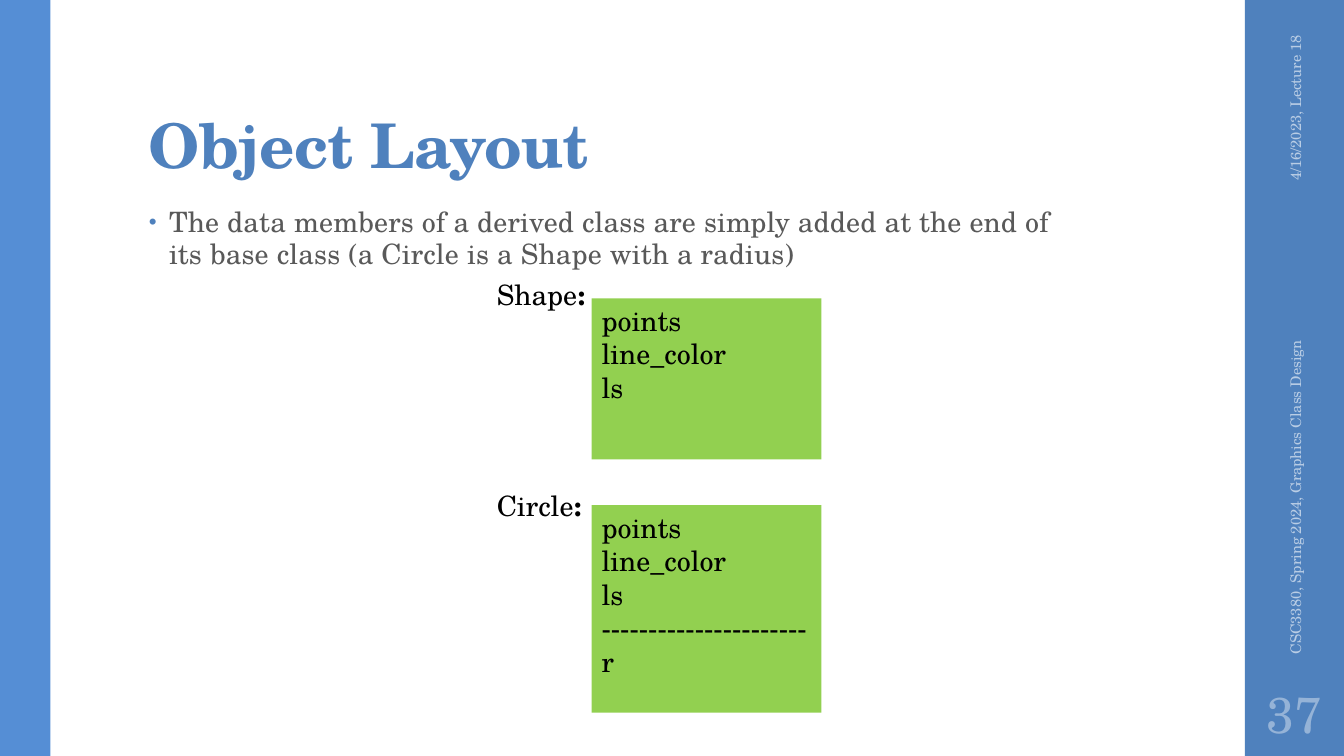
import pptx
import pptx.dml.color
import pptx.enum.shapes
import pptx.enum.text
import pptx.oxml
import pptx.oxml.ns
import pptx.util

Cm = pptx.util.Cm
Pt = pptx.util.Pt
RGBColor = pptx.dml.color.RGBColor
ALIGN = pptx.enum.text.PP_ALIGN
ANCHOR = pptx.enum.text.MSO_ANCHOR

FONT = "TeX Gyre Schola"
BLUE = RGBColor(0x4F, 0x81, 0xBD)
LIGHT_BLUE = RGBColor(0x55, 0x8E, 0xD5)
PALE_BLUE = RGBColor(0xB9, 0xCD, 0xE5)
NUMBER_BLUE = RGBColor(0x95, 0xB3, 0xD7)
GREEN = RGBColor(0x92, 0xD0, 0x50)
GRAY = RGBColor(0x59, 0x59, 0x59)
BLACK = RGBColor(0, 0, 0)

deck = pptx.Presentation()
deck.slide_width, deck.slide_height = Cm(33.87), Cm(19.05)
page = deck.slides.add_slide(deck.slide_layouts[6])


def add_rectangle(left, top, width, height, color):
    box = page.shapes.add_shape(
        pptx.enum.shapes.MSO_SHAPE.RECTANGLE, Cm(left), Cm(top), Cm(width), Cm(height))
    box.shadow.inherit = False
    box.fill.solid()
    box.fill.fore_color.rgb = color
    box.line.fill.background()
    return box


def write(box, text, size, color, align=ALIGN.LEFT, anchor=ANCHOR.TOP):
    """Fill a box with wrapped text in one size and color."""
    frame = box.text_frame
    frame.text = text
    frame.word_wrap = True
    frame.vertical_anchor = anchor
    for para in frame.paragraphs:
        para.alignment = align
        for span in para.runs:
            span.font.name = FONT
            span.font.size = Pt(size)
            span.font.color.rgb = color
    return frame


# Side bands
add_rectangle(31.37, 0, 2.5, 19.05, BLUE)
add_rectangle(0, 0, 1.27, 19.05, LIGHT_BLUE)

# Title
title = page.shapes.add_textbox(Cm(3.5), Cm(0.81), Cm(26.92), Cm(3.89))
frame = write(title, "Object Layout", 44, BLUE, anchor=ANCHOR.BOTTOM)
frame.margin_top = Cm(0.08)
para = frame.paragraphs[0]
para.line_spacing = 0.9
para.runs[0].font.bold = True
para.runs[0].font._element.set("spc", "-50")

# Bullet
body = page.shapes.add_textbox(Cm(3.5), Cm(5.08), Cm(23.88), Cm(12.09))
frame = write(body, "The data members of a derived class are simply added at the end of "
              "its base class (a Circle is a Shape with a radius)", 20, GRAY)
para = frame.paragraphs[0]
para.line_spacing = 0.95
para.space_before, para.space_after = Pt(14), Pt(2)
para.runs[0].font._element.set("spc", "10")
properties = para._p.get_or_add_pPr()
properties.set("marL", str(Cm(0.51)))
properties.set("indent", str(-Cm(0.51)))
namespace = pptx.oxml.ns.nsdecls("a")
for bullet_xml in (f'<a:buClr {namespace}><a:srgbClr val="{BLUE}"/></a:buClr>',
                   f'<a:buSzPct {namespace} val="80000"/>',
                   f'<a:buFont {namespace} typeface="Arial"/>',
                   f'<a:buChar {namespace} char="•"/>'):
    properties.append(pptx.oxml.parse_xml(bullet_xml))

# Date and course, turned to read upwards
for left, top, width, text, align in (
        (30, 2.77, 5.28, "4/16/2023, Lecture 18", ALIGN.RIGHT),
        (27.66, 11.25, 9.96, "CSC3380, Spring 2024, Graphics Class Design", ALIGN.LEFT)):
    box = page.shapes.add_textbox(Cm(left), Cm(top), Cm(width), Cm(1.02))
    box.rotation = 270
    write(box, text, 10.5, PALE_BLUE, align, ANCHOR.MIDDLE)

# Slide number
number = page.shapes.add_textbox(Cm(31.37), Cm(17.15), Cm(2.5), Cm(1.65))
frame = write(number, "37", 36, NUMBER_BLUE, ALIGN.CENTER, ANCHOR.MIDDLE)
frame.margin_left = frame.margin_right = Cm(0.13)

# Memory layout of each class
shape_members = ["points", "line_color", "ls"]
circle_members = shape_members + ["-" * 22, "r"]
for name, members, top, height, label_top in (
        ("Shape", shape_members, 7.52, 4.06, 6.88),
        ("Circle", circle_members, 12.73, 5.23, 12.19)):
    layout = add_rectangle(14.91, top, 5.79, height, GREEN)
    write(layout, "\n".join(members), 20, BLACK)
    label = page.shapes.add_textbox(Cm(12.27), Cm(label_top), Cm(3.48), Cm(1.73))
    frame = write(label, name, 20, BLACK)
    colon = frame.paragraphs[0].add_run()
    colon.text = ":"
    colon.font.name = FONT
    colon.font.size = Pt(20)
    colon.font.bold = True
    colon.font.color.rgb = BLACK

deck.save("out.pptx")
